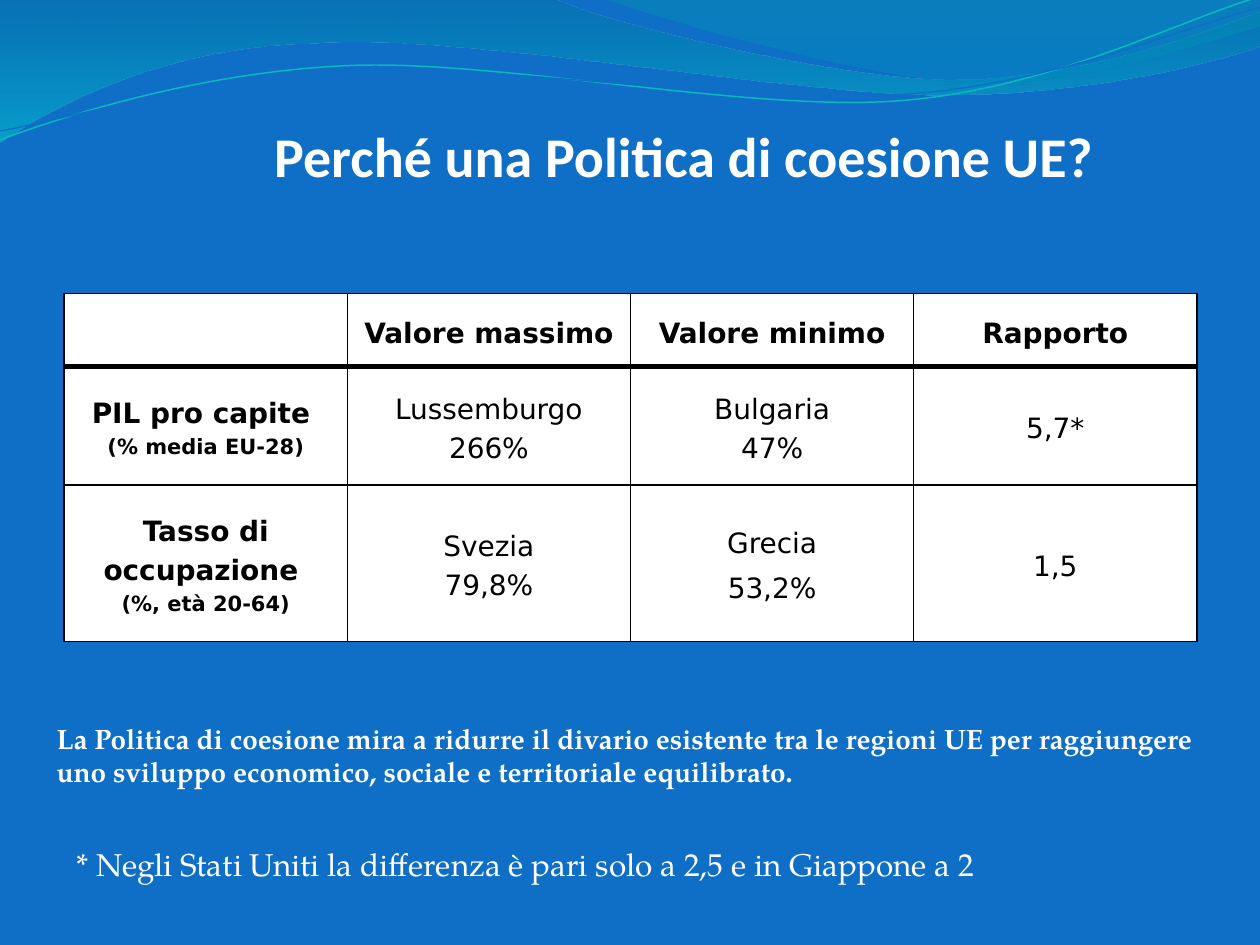
import copy
import math
import pptx
import pptx.util
import pptx.dml.color
import pptx.enum.text
import pptx.oxml
import pptx.oxml.ns
import lxml.etree

Inches = pptx.util.Inches
Pt = pptx.util.Pt
RGBColor = pptx.dml.color.RGBColor
ALIGN = pptx.enum.text.PP_ALIGN
ANCHOR = pptx.enum.text.MSO_ANCHOR
FIT = pptx.enum.text.MSO_AUTO_SIZE
qn = pptx.oxml.ns.qn

BLUE = RGBColor(0x0F, 0x6F, 0xC6)
WHITE = RGBColor(0xFF, 0xFF, 0xFF)
BLACK = RGBColor(0, 0, 0)
TEAL = RGBColor(0x0A, 0xB8, 0xBF)
DEEP = RGBColor(0x00, 0x74, 0xA1)
CYAN = RGBColor(0x00, 0xC6, 0xCF)
GREEN = RGBColor(0x00, 0xA1, 0xA9)
AZURE = RGBColor(0x00, 0x8B, 0xBF)
TILT = -2.7

prs = pptx.Presentation()
prs.slide_width, prs.slide_height = Inches(10), Inches(7.5)
slide = prs.slides.add_slide(prs.slide_layouts[6])
slide.background.fill.solid()
slide.background.fill.fore_color.rgb = BLUE


def add_wave(segments, closed, tilt=0, center=(0, 0)):
    cos, sin = math.cos(math.radians(tilt)), math.sin(math.radians(tilt))
    emu = []
    for seg in segments:
        for x, y in zip(seg[::2], seg[1::2]):
            dx, dy = x - center[0], y - center[1]
            emu.append((Inches(center[0] + dx * cos + dy * sin),
                        Inches(center[1] - dx * sin + dy * cos)))
    fb = slide.shapes.build_freeform(*emu[0])
    fb.add_line_segments(emu[1:], close=closed)
    s = fb.convert_to_shape()
    s.shadow.inherit = False
    s.rotation = tilt
    lines = iter(s._element.spPr.findall(".//" + qn("a:lnTo")))
    for seg in segments[1:]:
        first = next(lines)
        if len(seg) == 6:
            curve = lxml.etree.Element(qn("a:cubicBezTo"))
            first.addprevious(curve)
            for ln in (first, next(lines), next(lines)):
                curve.append(ln[0])
                ln.getparent().remove(ln)
    return s


def add_run(p, text, color, **fmt):
    r = p.add_run()
    r.text = text
    for name, value in fmt.items():
        setattr(r.font, name, value)
    r.font.color.rgb = color
    return r


bands = [
    ([(0, 0), (4.4, -0.01), (4.76, 0.17, 6.64, 0.63, 7.58, 0.63),
      (8.53, 0.63, 9.58, 0.26, 10, 0.09), (10.01, 0.36),
      (9.83, 0.44, 8.7, 0.76, 7.46, 0.75), (6.22, 0.75, 3.82, 0.28, 2.57, 0.34),
      (1.29, 0.36, 0.46, 0.83, -0.01, 1.13), (0, 0)],
     [(0, DEEP, 45), (1, CYAN, 55)]),
    ([(4.79, -0.01), (5.09, 0.11, 6.82, 0.62, 7.69, 0.65),
      (8.56, 0.69, 9.61, 0.32, 10, 0.21), (10, 0), (4.79, -0.01)],
     [(0, GREEN, 30), (0.8, AZURE, 45)]),
]
for segments, stops in bands:
    s = add_wave(segments, True)
    s.line.fill.background()
    s.fill.gradient()
    s.fill.gradient_angle = 270
    for stop, (position, color, _) in zip(s.fill.gradient_stops, stops):
        stop.position = position
        stop.color.rgb = color
    clrs = s._element.spPr.findall(".//" + qn("a:srgbClr"))
    for clr, (_, _, alpha) in zip(clrs, stops):
        lxml.etree.SubElement(clr, qn("a:alpha")).set("val", str(alpha * 1000))

strands = [
    ([(0, 1.11), (0.48, 0.93, 1.58, 0.57, 2.77, 0.52),
      (3.95, 0.47, 5.93, 0.89, 7.13, 0.8), (8.33, 0.71, 9.38, 0.15, 9.98, -0.02)],
     (4.99, 0.58), TEAL, 0.85),
    ([(0, 1.04), (0.47, 0.96, 1.64, 0.61, 2.83, 0.56),
      (4.03, 0.51, 5.97, 0.84, 7.17, 0.75), (8.36, 0.67, 9.41, 0.21, 10, 0.06)],
     (5, 0.59), BLUE, 0.75),
]
for segments, center, color, width in strands:
    s = add_wave(segments, False, TILT, center)
    s.fill.background()
    s.line.color.rgb = color
    s.line.width = Pt(width)

rows = [
    [[], ["Valore massimo"], ["Valore minimo"], ["Rapporto"]],
    [["PIL pro capite \n(% media EU-28)"], ["Lussemburgo\n266%"], ["Bulgaria\n47%"], ["5,7*"]],
    [["Tasso di occupazione \n(%, età 20-64)"], ["Svezia", "79,8%"], ["Grecia", "53,2%"], ["1,5"]],
]
heights = [0.58, 0.94, 1.24]
frame = slide.shapes.add_table(3, 4, Inches(0.51), Inches(2.33), Inches(8.99), Inches(sum(heights)))
table = frame.table
for col in table.columns:
    col.width = Inches(8.99 / 4)
for i, row in enumerate(rows):
    table.rows[i].height = Inches(heights[i])
    for j, paragraphs in enumerate(row):
        cell = table.cell(i, j)
        label = i > 0 and j == 0
        cell.vertical_anchor = ANCHOR.MIDDLE
        cell.margin_left = cell.margin_right = Inches(0 if label else 0.1)
        tcPr = cell._tc.get_or_add_tcPr()
        for side in "LRTB":
            thick = (i, side) in ((0, "B"), (1, "T"))
            ln = lxml.etree.SubElement(tcPr, qn("a:ln" + side), w=str(Pt(3 if thick else 1)))
            fill = lxml.etree.SubElement(ln, qn("a:solidFill"))
            lxml.etree.SubElement(fill, qn("a:srgbClr"), val=str(BLACK))
        cell.fill.solid()
        cell.fill.fore_color.rgb = WHITE
        for n, text in enumerate(paragraphs):
            p = cell.text_frame.paragraphs[0] if n == 0 else cell.text_frame.add_paragraph()
            p.alignment = ALIGN.CENTER
            p.line_spacing = 1.2
            if (i, j) == (2, 2):
                p.space_before = Pt(3.2)
            for k, line in enumerate(text.split("\n")):
                if k:
                    p.add_line_break()
                    p._p[-1].append(copy.deepcopy(r._r.rPr))
                r = add_run(p, line, BLACK, name="DejaVu Sans",
                            size=Pt(12 if label and k else 16), bold=i == 0 or j == 0)

texts = [
    ("Perché una Politica di coesione UE?", (0.98, 0.29, 7.72, 1.21),
     dict(vertical_anchor=ANCHOR.BOTTOM, margin_left=0, margin_top=0,
          margin_right=Inches(0.02), margin_bottom=0),
     dict(alignment=ALIGN.RIGHT), dict(name="Calibri", size=Pt(32), bold=True)),
    ("* Negli Stati Uniti la differenza è pari solo a 2,5 e in Giappone a 2",
     (0.51, 6.6, 8.98, 0.34), dict(auto_size=FIT.SHAPE_TO_FIT_TEXT),
     dict(line_spacing=1.2), dict(name="TeX Gyre Pagella", size=Pt(18))),
    ("La Politica di coesione mira a ridurre il divario esistente tra le regioni UE per "
     "raggiungere uno sviluppo economico, sociale e territoriale equilibrato.",
     (0.35, 5.67, 9.61, 0.64),
     dict(vertical_anchor=ANCHOR.MIDDLE, auto_size=FIT.SHAPE_TO_FIT_TEXT),
     {}, dict(name="TeX Gyre Pagella", size=Pt(16), bold=True)),
]
for text, box, frame_fmt, para_fmt, font_fmt in texts:
    tf = slide.shapes.add_textbox(*map(Inches, box)).text_frame
    tf.word_wrap = True
    p = tf.paragraphs[0]
    for target, fmt in ((tf, frame_fmt), (p, para_fmt)):
        for name, value in fmt.items():
            setattr(target, name, value)
    add_run(p, text, WHITE, **font_fmt)

prs.save("out.pptx")
